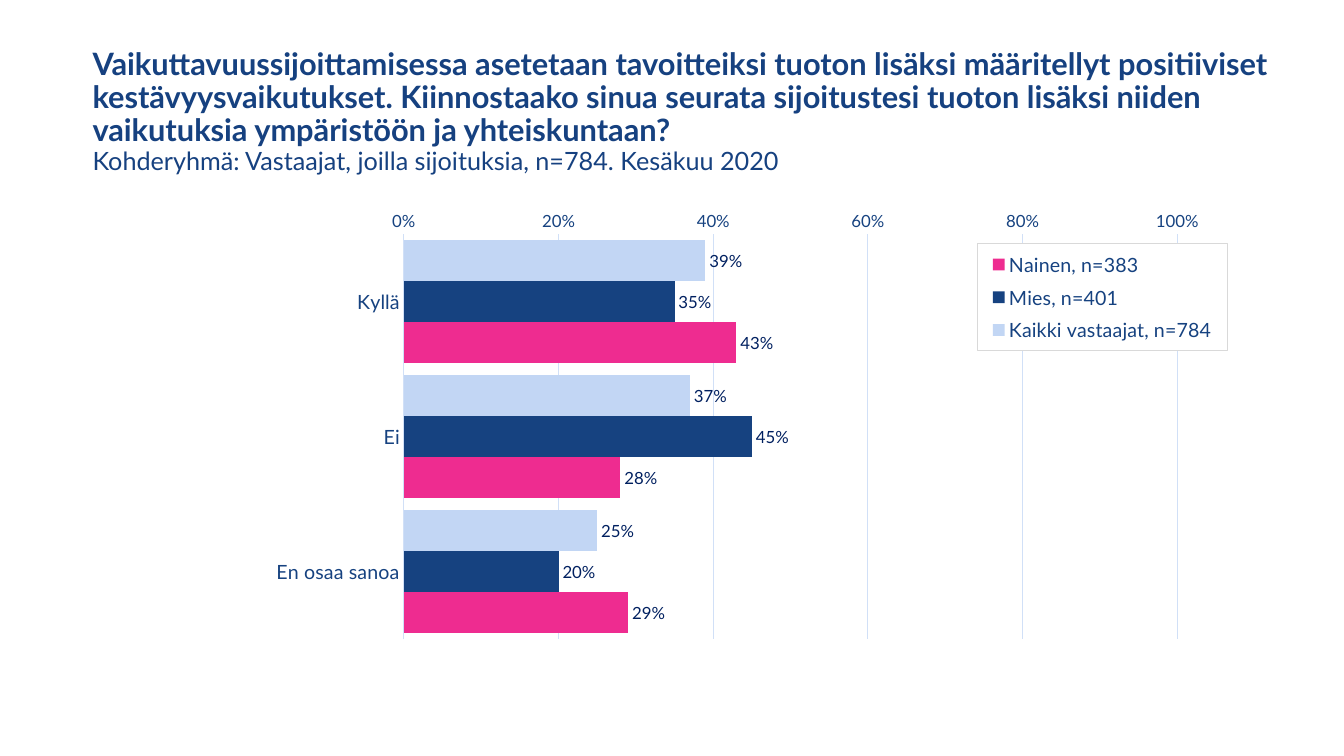
from dataclasses import dataclass

from lxml import etree
from pptx import Presentation
from pptx.chart.data import CategoryChartData
from pptx.dml.color import RGBColor
from pptx.enum import chart as ch, text
from pptx.oxml import parse_xml
from pptx.oxml.ns import nsdecls, qn
from pptx.util import Pt


@dataclass(frozen=True)
class Theme:
    """Colours, font and type sizes of the slide."""
    font: str = "Lato"
    title: str = "164180"
    navy: str = "164280"
    label: str = "002060"
    sky: str = "C2D6F4"
    pink: str = "EE2C90"
    grid: str = "D1E0F7"
    border: str = "D9D9D9"
    title_size: int = 22
    subtitle_size: int = 18
    text_size: int = 14
    value_size: int = 12


T = Theme()
TITLE = ("Vaikuttavuussijoittamisessa asetetaan tavoitteiksi tuoton lisäksi määritellyt "
         "positiiviset kestävyysvaikutukset. Kiinnostaako sinua seurata sijoitustesi tuoton "
         "lisäksi niiden vaikutuksia ympäristöön ja yhteiskuntaan?")
SUBTITLE = "Kohderyhmä: Vastaajat, joilla sijoituksia, n=784. Kesäkuu 2020"
ANSWERS = ("Kyllä", "Ei", "En osaa sanoa")
GROUPS = (
    ("Kaikki vastaajat, n=784", (0.39, 0.37, 0.25), T.sky),
    ("Mies, n=401", (0.35, 0.45, 0.20), T.navy),
    ("Nainen, n=383", (0.43, 0.28, 0.29), T.pink),
)


def style_font(font, size, color, bold=False):
    """Apply the theme font with a size, colour and weight."""
    font.name, font.size, font.bold = T.font, Pt(size), bold
    font.color.rgb = RGBColor.from_string(color)


def style_line(line, color):
    """Give a line a colour and the common hairline width."""
    line.color.rgb = RGBColor.from_string(color)
    line.width = Pt(0.75)


def add_title(s, x, y, w, h):
    """Add the bold question and its plain subtitle."""
    tf = s.shapes.add_textbox(Pt(x), Pt(y), Pt(w), Pt(h)).text_frame
    tf.word_wrap = True
    tf.vertical_anchor = text.MSO_ANCHOR.MIDDLE
    p = tf.paragraphs[0]
    p.line_spacing = 0.9
    r = p.add_run()
    r.text = TITLE
    style_font(r.font, T.title_size, T.title, True)
    p.add_line_break()
    r = p.add_run()
    r.text = SUBTITLE
    style_font(r.font, T.subtitle_size, T.title)


def set_layout(parent, index, x, y, w, h, inner=False):
    """Place a chart part by fractions of the chart area."""
    for old in parent.findall(qn("c:layout")):
        parent.remove(old)
    layout = parse_xml(f"<c:layout {nsdecls('c')}><c:manualLayout/></c:layout>")
    settings = [("layoutTarget", "inner")] if inner else []
    settings += [("xMode", "edge"), ("yMode", "edge"), ("x", x), ("y", y), ("w", w), ("h", h)]
    for tag, value in settings:
        etree.SubElement(layout[0], qn(f"c:{tag}")).set("val", str(value))
    parent.insert(index, layout)


def style_axes(chart):
    """Format the answer axis and the percentage axis."""
    cat, val = chart.category_axis, chart.value_axis
    cat.reverse_order = True
    style_line(cat.format.line, T.grid)
    val.minimum_scale, val.maximum_scale, val.major_unit = 0, 1, 0.2
    val.has_major_gridlines = True
    style_line(val.major_gridlines.format.line, T.grid)
    val.format.line.fill.background()
    val.tick_labels.number_format = "0%"
    val.tick_labels.number_format_is_linked = False
    for axis, size in ((cat, T.text_size), (val, T.value_size)):
        axis.major_tick_mark = axis.minor_tick_mark = ch.XL_TICK_MARK.NONE
        style_font(axis.tick_labels.font, size, T.navy)


def style_series(series, color):
    """Colour one respondent group and label its bars."""
    series.format.fill.solid()
    series.format.fill.fore_color.rgb = RGBColor.from_string(color)
    labels = series.data_labels
    labels.show_value = True
    labels.number_format = "0%"
    labels.number_format_is_linked = False
    labels.position = ch.XL_LABEL_POSITION.OUTSIDE_END
    style_font(labels.font, T.value_size, T.label)


def add_legend(chart, x, y, w, h):
    """Add a white framed legend over the plot."""
    chart.has_legend = True
    legend = chart.legend
    legend.position = ch.XL_LEGEND_POSITION.BOTTOM
    legend.include_in_layout = False
    style_font(legend.font, T.text_size, T.navy)
    element = legend._element
    set_layout(element, 1, x, y, w, h)
    frame = parse_xml(
        f'<c:spPr {nsdecls("c", "a")}><a:solidFill><a:srgbClr val="FFFFFF"/></a:solidFill>'
        f'<a:ln w="{Pt(0.75)}"><a:solidFill><a:srgbClr val="{T.border}"/></a:solidFill></a:ln>'
        "</c:spPr>")
    element.find(qn("c:txPr")).addprevious(frame)


def add_bar_chart(s, x, y, w, h):
    """Add the clustered bars of answers by respondent group."""
    data = CategoryChartData(number_format="0%")
    data.categories = ANSWERS
    for name, values, _ in GROUPS:
        data.add_series(name, values)
    chart = s.shapes.add_chart(ch.XL_CHART_TYPE.BAR_CLUSTERED,
                               Pt(x), Pt(y), Pt(w), Pt(h), data).chart
    chart.has_title = False
    style_font(chart.font, T.value_size, T.title)
    plot = chart.plots[0]
    plot.gap_width, plot.overlap, plot.vary_by_categories = 30, 0, False
    for series, (_, _, color) in zip(plot.series, GROUPS):
        style_series(series, color)
    style_axes(chart)
    set_layout(chart._chartSpace.chart.plotArea, 0, 0.27, 0.06, 0.65, 0.81, inner=True)
    add_legend(chart, 0.752, 0.079, 0.21, 0.214)


def main():
    """Build and save the slide."""
    prs = Presentation()
    prs.slide_width, prs.slide_height = Pt(960), Pt(540)
    s = prs.slides.add_slide(prs.slide_layouts[6])
    add_title(s, 59, 28, 890, 104.5)
    add_bar_chart(s, 59, 146, 850, 357)
    prs.save("out.pptx")


if __name__ == "__main__":
    main()
